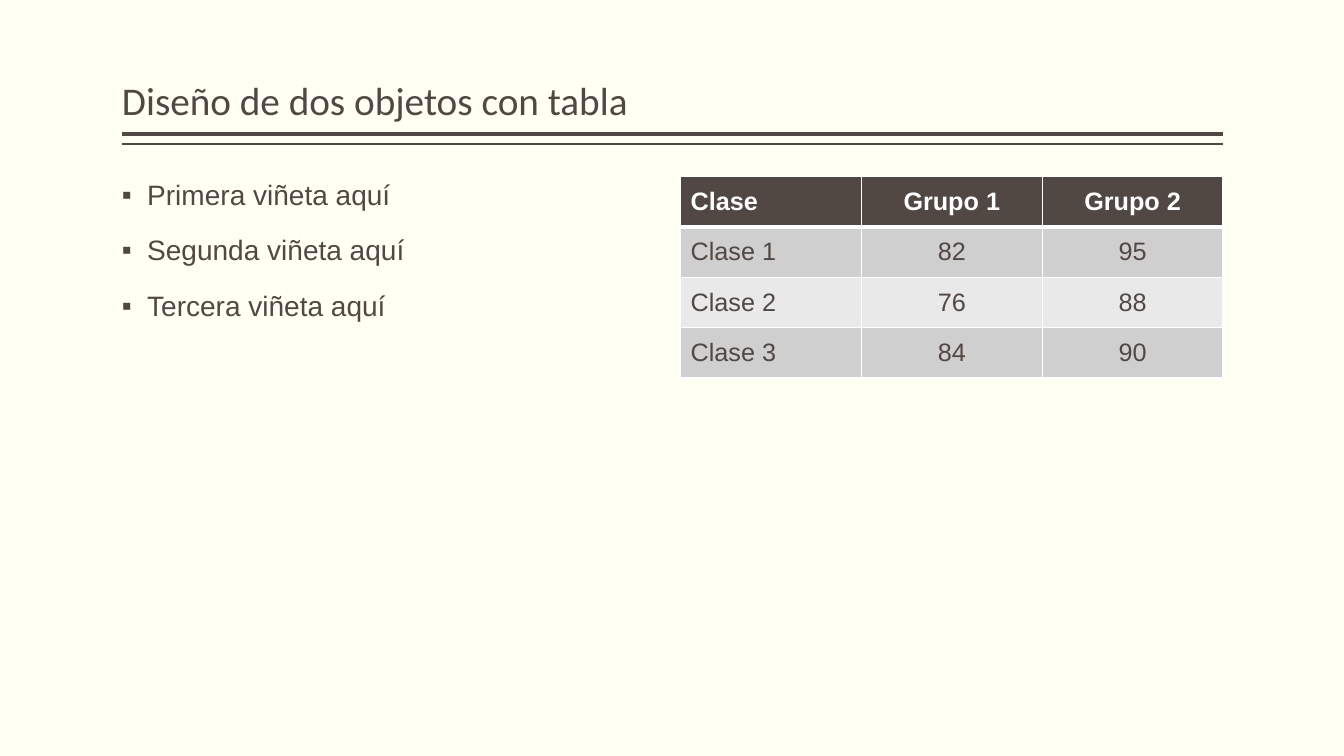
"""Build a slide with a title, a bullet list and a small results table."""
from dataclasses import dataclass

from lxml.etree import SubElement
from pptx import Presentation
from pptx.dml.color import RGBColor
from pptx.enum.shapes import MSO_CONNECTOR
from pptx.enum.text import MSO_ANCHOR, MSO_AUTO_SIZE, PP_ALIGN
from pptx.oxml.ns import qn
from pptx.util import Inches, Pt

BROWN, WHITE, CREAM = "514843", "FFFFFF", "FFFFF3"
BANDS = ("D0CFCF", "E9E9E9")
LEFT, RIGHT = 1.21, 12.13
BULLETS = ("Primera viñeta aquí", "Segunda viñeta aquí", "Tercera viñeta aquí")
ROWS = (
    ("Clase", "Grupo 1", "Grupo 2"),
    ("Clase 1", "82", "95"),
    ("Clase 2", "76", "88"),
    ("Clase 3", "84", "90"),
)


@dataclass(frozen=True)
class Rule:
    y: float
    width: float


@dataclass(frozen=True)
class Style:
    size: float
    font: str = "Arial"
    color: str = BROWN
    bold: bool = False


RULES = (Rule(1.33, 3), Rule(1.43, 1))


def rgb(value: str) -> RGBColor:
    return RGBColor.from_string(value)


def style_paragraph(p, style: Style) -> None:
    for r in p.runs:
        r.font.size = Pt(style.size)
        r.font.name = style.font
        r.font.bold = style.bold
        r.font.color.rgb = rgb(style.color)


def set_frame(tf, anchor) -> None:
    tf.word_wrap = True
    tf.auto_size = MSO_AUTO_SIZE.NONE
    tf.vertical_anchor = anchor
    tf.margin_left = tf.margin_right = 0
    tf.margin_top = tf.margin_bottom = Inches(0.05)


def add_rule(s, rule: Rule) -> None:
    line = s.shapes.add_connector(
        MSO_CONNECTOR.STRAIGHT,
        Inches(LEFT), Inches(rule.y), Inches(RIGHT), Inches(rule.y),
    )
    line.line.color.rgb = rgb(BROWN)
    line.line.width = Pt(rule.width)
    SubElement(line._element.spPr, qn("a:effectLst"))


def add_title(s) -> None:
    sp = s.shapes.title
    sp.left, sp.top = Inches(LEFT), Inches(0.08)
    sp.width, sp.height = Inches(RIGHT - LEFT), Inches(1.2)
    tf = sp.text_frame
    set_frame(tf, MSO_ANCHOR.BOTTOM)
    tf.text = "Diseño de dos objetos con tabla"
    p = tf.paragraphs[0]
    p.alignment = PP_ALIGN.LEFT
    p.line_spacing = 0.9
    style_paragraph(p, Style(28, "Calibri"))


def add_bullets(s) -> None:
    sp = s.shapes.add_textbox(Inches(LEFT), Inches(1.75), Inches(5.38), Inches(5))
    tf = sp.text_frame
    set_frame(tf, MSO_ANCHOR.TOP)
    tf.text = "\n".join(BULLETS)
    for p in tf.paragraphs:
        p.line_spacing = 0.9
        p.space_before = Pt(18)
        style_paragraph(p, Style(20))
        props = p._p.get_or_add_pPr()
        props.set("marL", str(Inches(0.25)))
        props.set("indent", str(-Inches(0.25)))
        SubElement(props, qn("a:buFont"), typeface="Arial")
        SubElement(props, qn("a:buChar"), char="▪")


def set_borders(cell, top: float, bottom: float) -> None:
    props = cell._tc.get_or_add_tcPr()
    for side, width in (("L", 1), ("R", 1), ("T", top), ("B", bottom)):
        line = SubElement(props, qn(f"a:ln{side}"), w=str(Pt(width)))
        fill = SubElement(line, qn("a:solidFill"))
        SubElement(fill, qn("a:srgbClr"), val=WHITE)


def format_cell(cell, row: int, col: int) -> None:
    header = row == 0
    set_borders(cell, top=3 if row == 1 else 1, bottom=3 if header else 1)
    cell.fill.solid()
    cell.fill.fore_color.rgb = rgb(BROWN if header else BANDS[(row - 1) % 2])
    cell.vertical_anchor = MSO_ANCHOR.MIDDLE
    p = cell.text_frame.paragraphs[0]
    p.alignment = PP_ALIGN.CENTER if col else PP_ALIGN.LEFT
    style_paragraph(p, Style(18, color=WHITE if header else BROWN, bold=header))


def add_results(s) -> None:
    table = s.shapes.add_table(
        len(ROWS), len(ROWS[0]),
        Inches(6.75), Inches(1.75), Inches(5.38), Inches(0.5 * len(ROWS)),
    ).table
    for row, values in enumerate(ROWS):
        for col, value in enumerate(values):
            cell = table.cell(row, col)
            cell.text = value
            format_cell(cell, row, col)


def main() -> None:
    prs = Presentation()
    prs.slide_width, prs.slide_height = Inches(13.33), Inches(7.5)
    s = prs.slides.add_slide(prs.slide_layouts[5])
    s.background.fill.solid()
    s.background.fill.fore_color.rgb = rgb(CREAM)
    for rule in RULES:
        add_rule(s, rule)
    add_title(s)
    add_bullets(s)
    add_results(s)
    prs.save("out.pptx")


if __name__ == "__main__":
    main()
